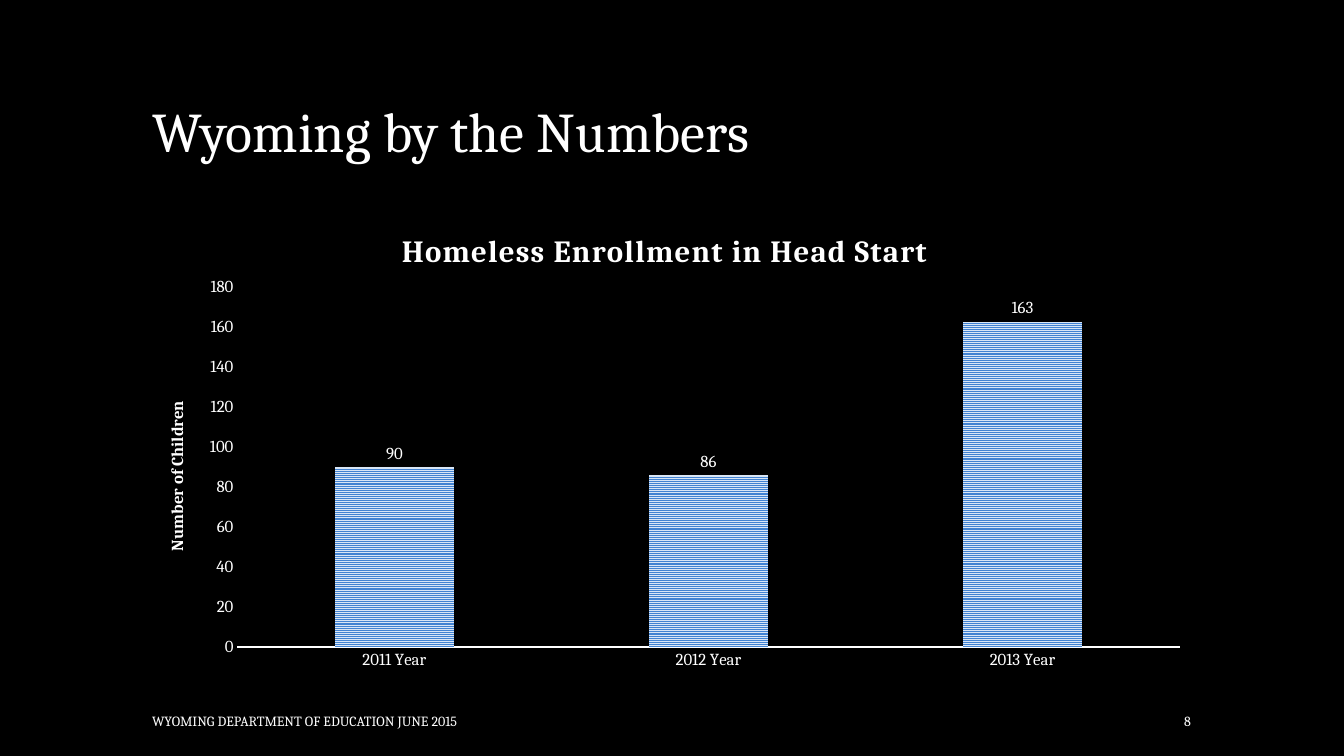
from pptx import Presentation
from pptx.chart.data import CategoryChartData
from pptx.dml.color import RGBColor
from pptx.enum.chart import XL_CHART_TYPE, XL_LABEL_POSITION, XL_TICK_MARK
from pptx.enum.dml import MSO_PATTERN
from pptx.enum.text import MSO_ANCHOR, PP_ALIGN
from pptx.oxml import parse_xml
from pptx.oxml.ns import nsdecls, qn
from pptx.util import Inches, Pt

BLACK = RGBColor(0x00, 0x00, 0x00)
WHITE = RGBColor(0xFF, 0xFF, 0xFF)
STRIPE_BLUE = RGBColor(0x42, 0x83, 0xD2)
STRIPE_PALE = RGBColor(0xD9, 0xE6, 0xF6)
FACE = "Cambria"
LEFT, CONTENT_WIDTH = 1.41, 10.5
FOOTER_TOP, FOOTER_HEIGHT, NUMBER_WIDTH = 7, 0.3, 1.33
ENROLLMENT = {"2011 Year": 90, "2012 Year": 86, "2013 Year": 163}


def style_font(font, size, bold=False):
    """Apply the slide's white typeface at the given size."""
    font.name, font.size, font.bold = FACE, Pt(size), bold
    font.color.rgb = WHITE


def add_text(slide, wording, bounds, size, anchor=MSO_ANCHOR.MIDDLE,
             align=PP_ALIGN.LEFT, line_spacing=None):
    """Add a wrapped one-paragraph text box."""
    frame = slide.shapes.add_textbox(*map(Inches, bounds)).text_frame
    frame.word_wrap = True
    frame.vertical_anchor = anchor
    paragraph = frame.paragraphs[0]
    paragraph.text = wording
    paragraph.alignment = align
    paragraph.line_spacing = line_spacing
    style_font(paragraph.font, size)


def place(element, index, target="", **shares):
    """Fix the position of a chart part as shares of the chart's size."""
    for old in element.findall(qn("c:layout")):
        element.remove(old)
    modes = "".join(f'<c:{axis}Mode val="edge"/>' for axis in "xy")
    values = "".join(f'<c:{side} val="{share}"/>' for side, share in shares.items())
    element.insert(index, parse_xml(
        f'<c:layout {nsdecls("c")}><c:manualLayout>{target}{modes}{values}'
        '</c:manualLayout></c:layout>'))


def add_heading(owner, wording, size, x, y):
    """Give a chart or an axis a bold title and return its paragraph."""
    heading = owner.chart_title if hasattr(owner, "chart_title") else owner.axis_title
    paragraph = heading.text_frame.paragraphs[0]
    paragraph.text = wording
    style_font(paragraph.font, size, bold=True)
    place(heading._element, 1, x=x, y=y)
    return paragraph


def style_axis(axis):
    """Strip gridlines and ticks from an axis and set its labels."""
    axis.has_major_gridlines = False
    axis.major_tick_mark = axis.minor_tick_mark = XL_TICK_MARK.NONE
    style_font(axis.tick_labels.font, 12)


def style_bars(plot):
    """Stripe the bars and label each with its value."""
    plot.gap_width, plot.overlap = 164, -22
    plot.vary_by_categories = False
    bars = plot.series[0]
    bars.invert_if_negative = False
    stripes = bars.format.fill
    stripes.patterned()
    stripes.pattern = MSO_PATTERN.NARROW_HORIZONTAL
    stripes.fore_color.rgb = STRIPE_BLUE
    stripes.back_color.rgb = STRIPE_PALE
    labels = bars.data_labels
    labels.show_value = True
    labels.position = XL_LABEL_POSITION.OUTSIDE_END
    style_font(labels.font, 12)


def add_enrollment_chart(slide):
    """Add the column chart of yearly enrollment."""
    enrollment = CategoryChartData()
    enrollment.categories = list(ENROLLMENT)
    enrollment.add_series("Series 1", list(ENROLLMENT.values()))
    chart = slide.shapes.add_chart(
        XL_CHART_TYPE.COLUMN_CLUSTERED,
        *map(Inches, (LEFT, 2, CONTENT_WIDTH, 4.75)), enrollment).chart
    style_font(chart.font, 10)
    chart.has_legend = False
    years, children = chart.category_axis, chart.value_axis
    for axis in (years, children):
        style_axis(axis)
    years.format.line.color.rgb = WHITE
    years.format.line.width = Pt(1.5)
    children.format.line.fill.background()
    children.minimum_scale, children.maximum_scale, children.major_unit = 0, 180, 20
    heading = add_heading(chart, "Homeless Enrollment in Head Start", 22, 0.24, 0.05)
    heading.runs[0].font._element.set("spc", "100")
    add_heading(children, "Number of Children", 12, 0.02, 0.41)
    style_bars(chart.plots[0])
    place(chart._chartSpace.chart.plotArea, 0, '<c:layoutTarget val="inner"/>',
          x=0.09, y=0.18, w=0.89, h=0.75)


def main():
    """Build and save the enrollment slide."""
    deck = Presentation()
    deck.slide_width, deck.slide_height = Inches(13.33), Inches(7.5)
    slide = deck.slides.add_slide(deck.slide_layouts[6])
    slide.background.fill.solid()
    slide.background.fill.fore_color.rgb = BLACK
    add_text(slide, "Wyoming by the Numbers", (LEFT, 0.42, CONTENT_WIDTH, 1.25), 40,
             anchor=MSO_ANCHOR.BOTTOM, line_spacing=0.8)
    add_enrollment_chart(slide)
    add_text(slide, "WYOMING DEPARTMENT OF EDUCATION JUNE 2015",
             (LEFT, FOOTER_TOP, 6.92, FOOTER_HEIGHT), 10)
    add_text(slide, "8", (LEFT + CONTENT_WIDTH - NUMBER_WIDTH, FOOTER_TOP,
                          NUMBER_WIDTH, FOOTER_HEIGHT), 10, align=PP_ALIGN.RIGHT)
    deck.save("out.pptx")


if __name__ == "__main__":
    main()
